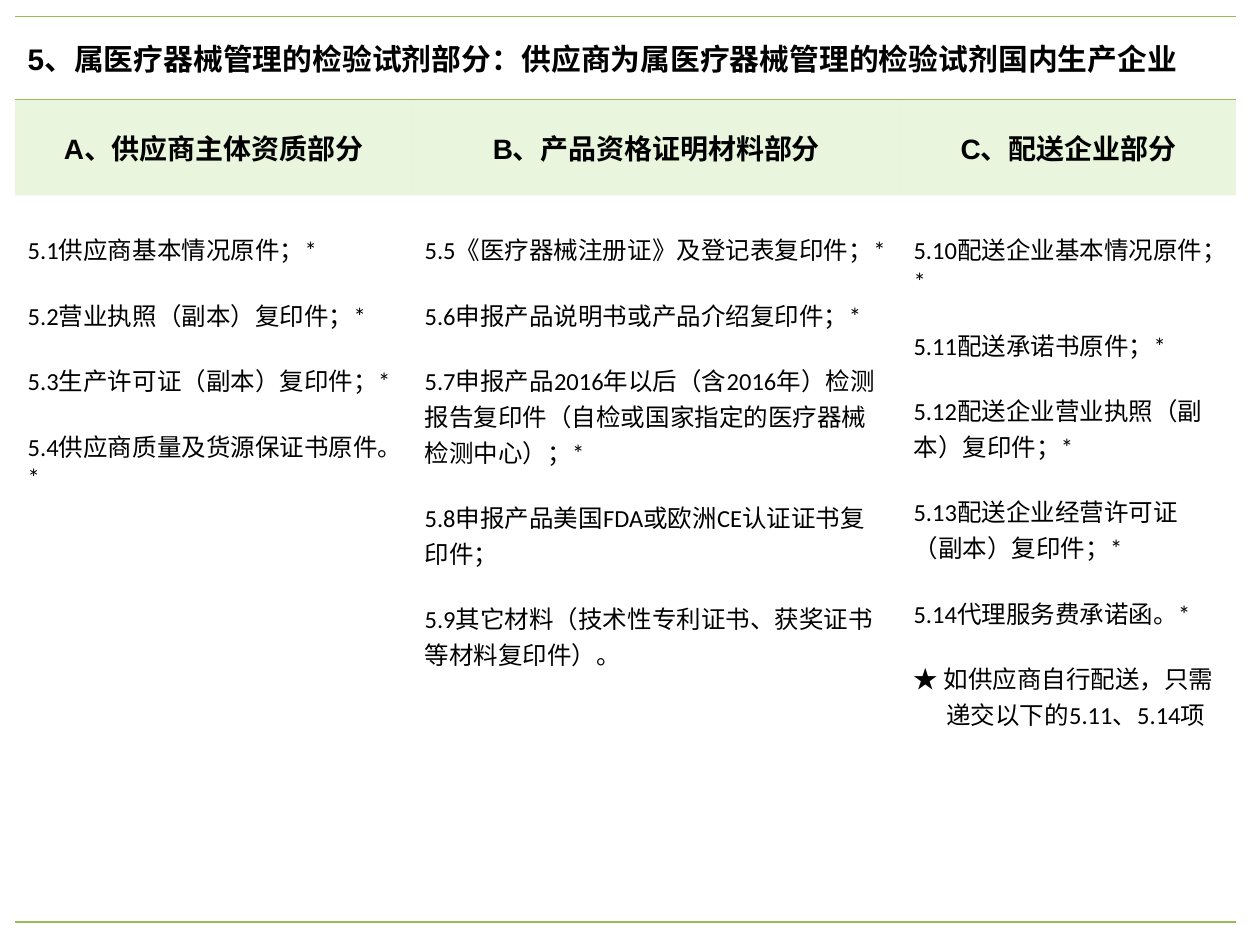
import pptx
import pptx.util
import pptx.dml.color
import pptx.enum.text
import pptx.oxml
import pptx.oxml.ns
from lxml import etree

Inches, Pt = pptx.util.Inches, pptx.util.Pt
ANCHOR, ALIGN = pptx.enum.text.MSO_ANCHOR, pptx.enum.text.PP_ALIGN
GREEN, LIGHT_GREEN, BLACK = "9BBB59", "92D050", "000000"
COL_WIDTHS = [3.15, 3.88, 2.66]
ROW_HEIGHTS = [0.66, 0.76, 5.77]
BLANK_LINE = 17  # points between items

TITLE = [
    ("5、", "Arial"),
    ("属医疗器械管理的检验试剂部分", "Calibri"),
    ("：", "Arial"),
    ("供应商为属医疗器械管理的检验试剂国内生产企业", "Calibri"),
]
SECTIONS = [
    ("A、供应商主体资质部分", [
        "5.1供应商基本情况原件；*",
        "5.2营业执照（副本）复印件；*",
        "5.3生产许可证（副本）复印件；*",
        "5.4供应商质量及货源保证书原件。*",
    ]),
    ("B、产品资格证明材料部分", [
        "5.5《医疗器械注册证》及登记表复印件；*",
        "5.6申报产品说明书或产品介绍复印件；*",
        "5.7申报产品2016年以后（含2016年）检测报告复印件"
        "（自检或国家指定的医疗器械检测中心）；*",
        "5.8申报产品美国FDA或欧洲CE认证证书复印件；",
        "5.9其它材料（技术性专利证书、获奖证书等材料复印件）。",
    ]),
    ("C、配送企业部分", [
        "5.10配送企业基本情况原件；*",
        "5.11配送承诺书原件；*",
        "5.12配送企业营业执照（副本）复印件；*",
        "5.13配送企业经营许可证（副本）复印件；*",
        "5.14代理服务费承诺函。*",
        "★ 如供应商自行配送，只需",
    ]),
]
NOTE_END = "递交以下的5.11、5.14项"


def rgb(value):
    return pptx.dml.color.RGBColor.from_string(value)


def set_font(p, size, bold, name=None):
    p.font.size, p.font.bold = Pt(size), bold
    p.font.color.rgb = rgb(BLACK)
    if name:
        p.font.name = name


def set_borders(cell, **colors):
    """Draw the sides named (T, B) in their colours and hide the others."""
    tc_pr = cell._tc.get_or_add_tcPr()
    for i, side in enumerate("LRTB"):
        color = colors.get(side)
        fill = (f'<a:solidFill><a:srgbClr val="{color}"/></a:solidFill>'
                if color else "<a:noFill/>")
        ln = pptx.oxml.parse_xml(
            f'<a:ln{side} {pptx.oxml.ns.nsdecls("a")} w="{Pt(1)}">{fill}</a:ln{side}>')
        tc_pr.insert(i, ln)


def tint(cell, color, percent):
    cell.fill.solid()
    cell.fill.fore_color.rgb = rgb(color)
    clr = cell._tc.tcPr.find(".//" + pptx.oxml.ns.qn("a:srgbClr"))
    etree.SubElement(clr, pptx.oxml.ns.qn("a:alpha")).set("val", str(percent * 1000))


def fill_title(table):
    for cell in table.rows[0].cells:
        cell.fill.background()
        set_borders(cell, T=GREEN, B=GREEN)
    cell = table.cell(0, 0)
    cell.merge(table.cell(0, len(COL_WIDTHS) - 1))
    cell.vertical_anchor = ANCHOR.MIDDLE
    p = cell.text_frame.paragraphs[0]
    set_font(p, 17, True)
    for text, name in TITLE:
        r = p.add_run()
        r.text, r.font.name = text, name


def fill_header(cell, text):
    tint(cell, LIGHT_GREEN, 20)
    set_borders(cell, T=GREEN)
    cell.vertical_anchor = ANCHOR.MIDDLE
    p = cell.text_frame.paragraphs[0]
    p.text, p.alignment = text, ALIGN.CENTER
    set_font(p, 16, True, "Arial")


def fill_items(cell, items):
    cell.fill.background()
    set_borders(cell, B=GREEN)
    cell.margin_top = Inches(0.05) + Pt(BLANK_LINE)
    tf = cell.text_frame
    for i, item in enumerate(items):
        p = tf.add_paragraph() if i else tf.paragraphs[0]
        p.text = item
        p.space_before = Pt(BLANK_LINE if i else 0)
        set_font(p, 14, False, "Calibri")


def add_note_end(cell):
    p = cell.text_frame.add_paragraph()
    p.text = NOTE_END
    set_font(p, 14, False, "Calibri")
    p_pr = p._p.get_or_add_pPr()
    p_pr.set("marL", "0")
    p_pr.set("indent", str(Inches(0.26)))


def add_requirements_table(slide, left, top):
    table = slide.shapes.add_table(
        len(ROW_HEIGHTS), len(COL_WIDTHS), Inches(left), Inches(top),
        Inches(sum(COL_WIDTHS)), Inches(sum(ROW_HEIGHTS))).table
    table.first_row = table.horz_banding = False
    for col, width in zip(table.columns, COL_WIDTHS):
        col.width = Inches(width)
    for row, height in zip(table.rows, ROW_HEIGHTS):
        row.height = Inches(height)
    fill_title(table)
    for i, (heading, items) in enumerate(SECTIONS):
        fill_header(table.cell(1, i), heading)
        fill_items(table.cell(2, i), items)
    add_note_end(table.cell(2, 2))


def main():
    prs = pptx.Presentation()
    prs.slide_width, prs.slide_height = Inches(10), Inches(7.5)
    slide = prs.slides.add_slide(prs.slide_layouts[6])
    add_requirements_table(slide, 0.12, 0.13)
    prs.save("out.pptx")


if __name__ == "__main__":
    main()
